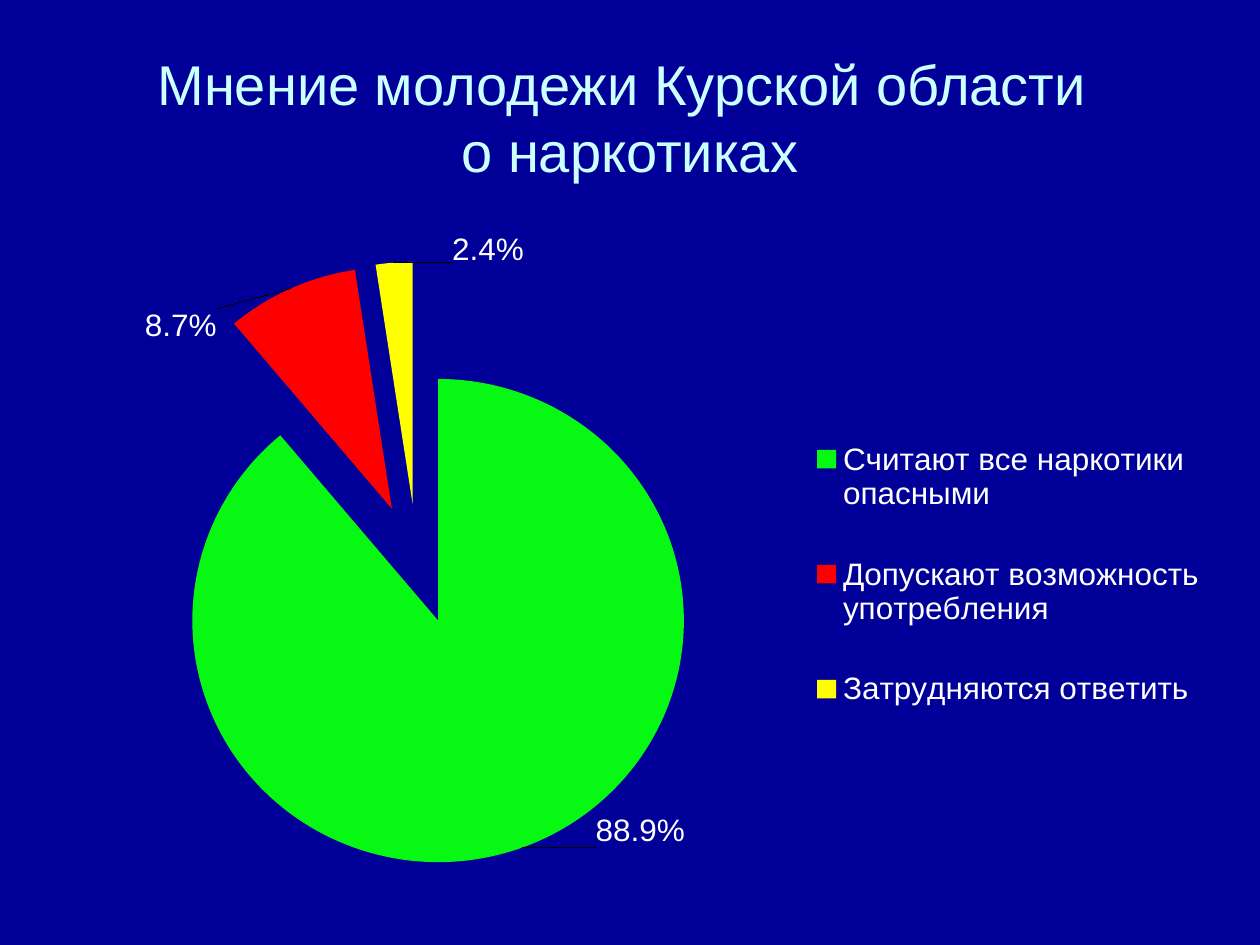
from dataclasses import dataclass

from lxml.etree import SubElement
from pptx import Presentation
from pptx.chart.data import CategoryChartData
from pptx.dml.color import RGBColor as RGB
from pptx.enum.chart import XL_CHART_TYPE as ChartType
from pptx.enum.chart import XL_LABEL_POSITION as LabelPos
from pptx.enum.chart import XL_LEGEND_POSITION as LegendPos
from pptx.enum.text import MSO_ANCHOR, PP_ALIGN
from pptx.oxml.ns import qn
from pptx.util import Inches, Pt


@dataclass(frozen=True)
class Theme:
    font: str = "Arial"
    background: RGB = RGB(0x00, 0x00, 0x99)
    title: RGB = RGB(0xCC, 0xFF, 0xFF)
    text: RGB = RGB(0xFF, 0xFF, 0xFF)
    title_size: Pt = Pt(32)
    chart_size: Pt = Pt(18)


THEME = Theme()
TITLE = "Мнение молодежи Курской области \vо наркотиках"
OPINIONS = [
    ("Считают все наркотики опасными", 0.889, RGB(0x07, 0xF9, 0x13), (0.06, -0.06)),
    ("Допускают возможность употребления", 0.087, RGB(0xFF, 0x00, 0x00), (-0.06, 0.09)),
    ("Затрудняются ответить", 0.024, RGB(0xFF, 0xFF, 0x00), (0.08, 0.01)),
]


def style_font(font, size, color):
    font.name = THEME.font
    font.size = size
    font.color.rgb = color


def add_layout(parent, index, **values):
    for old in parent.findall(qn("c:layout")):
        parent.remove(old)
    layout = SubElement(parent, qn("c:layout"))
    manual = SubElement(layout, qn("c:manualLayout"))
    for tag, value in values.items():
        SubElement(manual, qn(f"c:{tag}")).set("val", str(value))
    parent.insert(index, layout)


def add_title(s, left, top, width, height):
    sp = s.shapes.title
    sp.left, sp.top, sp.width, sp.height = left, top, width, height
    tf = sp.text_frame
    tf.text = TITLE
    tf.word_wrap = True
    tf.vertical_anchor = MSO_ANCHOR.MIDDLE
    p = tf.paragraphs[0]
    p.alignment = PP_ALIGN.CENTER
    for r in p.runs:
        style_font(r.font, THEME.title_size, THEME.title)


def add_opinion_pie(s, left, top, width, height):
    data = CategoryChartData(number_format="0.0%")
    data.categories = [name for name, *_ in OPINIONS]
    data.add_series("Series 1", [value for _, value, *_ in OPINIONS])
    chart = s.shapes.add_chart(ChartType.PIE, left, top, width, height, data).chart
    style_font(chart.font, THEME.chart_size, THEME.text)
    chart.has_title = False

    plot = chart.plots[0]
    plot.vary_by_categories = True
    add_layout(chart._chartSpace.chart.plotArea, 0, layoutTarget="inner",
               xMode="edge", yMode="edge", x=0.06, y=0.04, w=0.52, h=0.89)

    chart.has_legend = True
    legend = chart.legend
    legend.position = LegendPos.RIGHT
    legend.include_in_layout = False
    style_font(legend.font, THEME.chart_size, THEME.text)
    add_layout(legend._element, 1, xMode="edge", yMode="edge",
               x=0.65, y=0.24, w=0.34, h=0.52)

    series = plot.series[0]
    labels = series.data_labels
    labels.number_format = "0.0%"
    labels.number_format_is_linked = False
    labels.show_value = True
    labels.position = LabelPos.OUTSIDE_END
    style_font(labels.font, THEME.chart_size, THEME.text)
    for i, (_, _, color, (dx, dy)) in enumerate(OPINIONS):
        point = series.points[i]
        point.format.fill.solid()
        point.format.fill.fore_color.rgb = color
        label = point.data_label
        style_font(label.font, THEME.chart_size, THEME.text)
        label.position = LabelPos.OUTSIDE_END
        add_layout(labels._element.findall(qn("c:dLbl"))[i], 1, x=dx, y=dy)

    ser = series._element
    explosion = SubElement(ser, qn("c:explosion"))
    explosion.set("val", "25")
    ser.find(qn("c:dPt")).addprevious(explosion)


def main():
    prs = Presentation()
    prs.slide_width, prs.slide_height = Inches(10), Inches(7.5)
    s = prs.slides.add_slide(prs.slide_layouts[5])
    s.background.fill.solid()
    s.background.fill.fore_color.rgb = THEME.background
    add_title(s, Inches(0.5), Inches(0.3), Inches(9), Inches(1.25))
    add_opinion_pie(s, Inches(0.31), Inches(1.75), Inches(9.38), Inches(5.52))
    prs.save("out.pptx")


if __name__ == "__main__":
    main()
